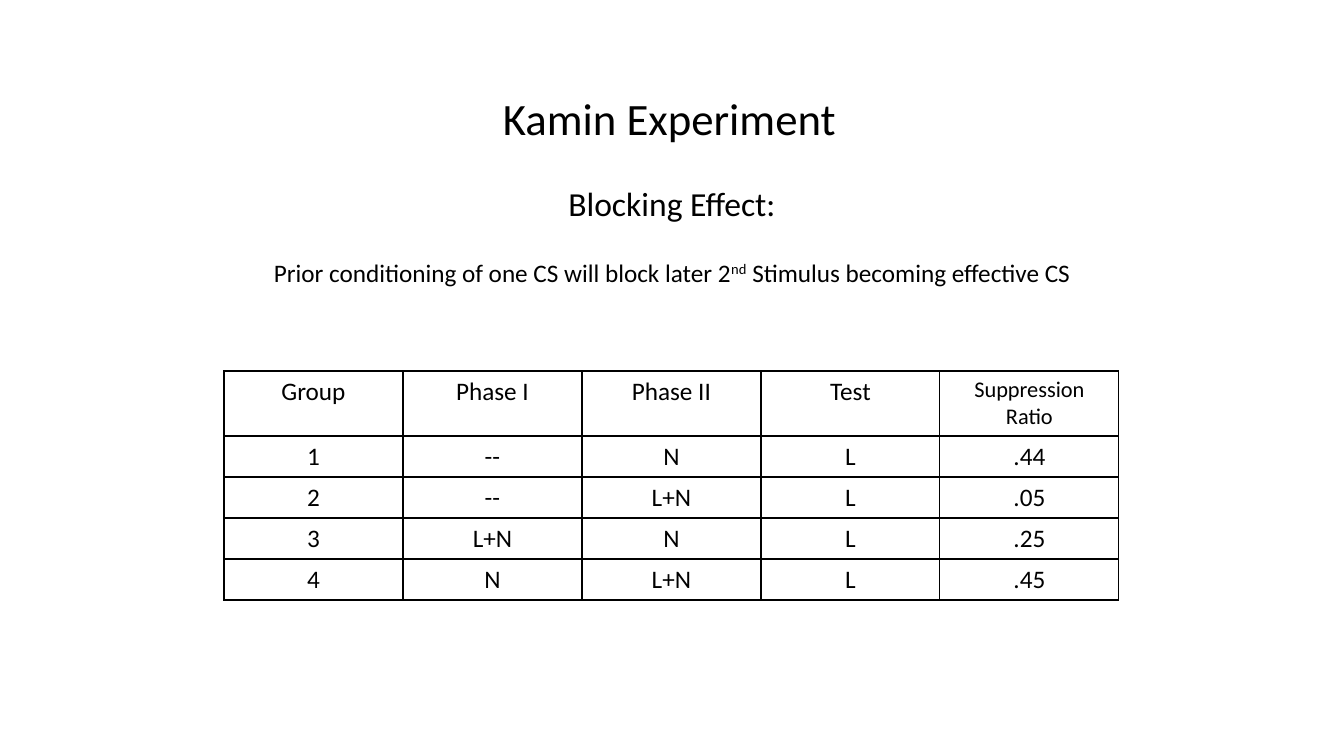
"""Build the Kamin blocking experiment slide."""
from lxml.etree import SubElement
from pptx import Presentation
from pptx.dml.color import RGBColor
from pptx.enum.text import MSO_AUTO_SIZE, PP_ALIGN
from pptx.oxml.ns import qn
from pptx.util import Pt

BLACK = "000000"


def px(n):
    return round(n * 914400 / 100.8)


def add_run(p, text, size):
    p.alignment = PP_ALIGN.CENTER
    r = p.add_run()
    r.text = text
    r.font.name = "Calibri"
    r.font.size = Pt(size)
    r.font.color.rgb = RGBColor.from_string(BLACK)
    return r


prs = Presentation()
prs.slide_width, prs.slide_height = px(1344), px(756)
s = prs.slides.add_slide(prs.slide_layouts[6])

rows = [
    ["Group", "Phase I", "Phase II", "Test", "Suppression Ratio"],
    ["1", "--", "N", "L", ".44"],
    ["2", "--", "L+N", "L", ".05"],
    ["3", "L+N", "N", "L", ".25"],
    ["4", "N", "L+N", "L", ".45"],
]
table = s.shapes.add_table(5, 5, px(224), px(371), px(895), px(229)).table
for col in table.columns:
    col.width = px(179)
for i, values in enumerate(rows):
    table.rows[i].height = px(41 if i else 65)
    for j, text in enumerate(values):
        cell = table.cell(i, j)
        add_run(cell.text_frame.paragraphs[0], text, 16 if text == "Suppression Ratio" else 18)
        tcPr = cell._tc.get_or_add_tcPr()
        for side in ("a:lnL", "a:lnR", "a:lnT", "a:lnB"):
            ln = SubElement(tcPr, qn(side), w=str(Pt(1)))
            SubElement(SubElement(ln, qn("a:solidFill")), qn("a:srgbClr"), val=BLACK)
        cell.fill.background()

frames = []
for x, y, w, h in [(230, 86, 879, 64), (224, 178, 896, 115)]:
    tf = s.shapes.add_textbox(px(x), px(y), px(w), px(h)).text_frame
    tf.word_wrap = True
    tf.auto_size = MSO_AUTO_SIZE.SHAPE_TO_FIT_TEXT
    frames.append(tf)
title, effect = frames

add_run(title.paragraphs[0], "Kamin Experiment", 32)
add_run(effect.paragraphs[0], "Blocking Effect:", 24)
p = effect.add_paragraph()
p.space_before = Pt(24)
add_run(p, "Prior conditioning of one CS will block later 2", 18)
r = add_run(p, "nd", 18)
r._r.get_or_add_rPr().set("baseline", "30000")
add_run(p, " Stimulus becoming effective CS", 18)

prs.save("out.pptx")
